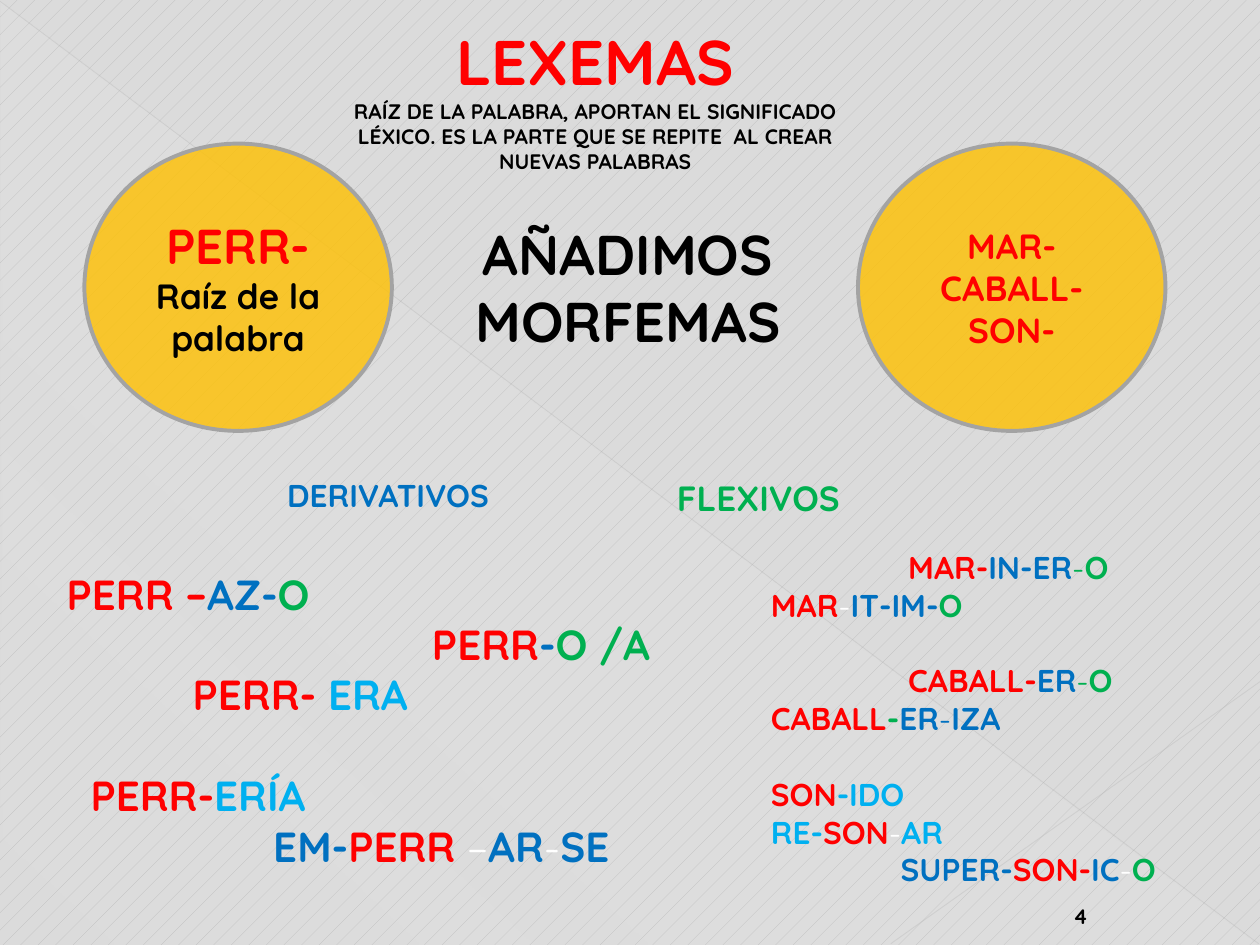
from lxml import etree
from pptx import Presentation
from pptx.dml.color import RGBColor
from pptx.enum.dml import MSO_PATTERN
from pptx.enum.shapes import MSO_CONNECTOR, MSO_SHAPE
from pptx.enum.text import MSO_ANCHOR, PP_ALIGN
from pptx.oxml import parse_xml
from pptx.oxml.ns import qn
from pptx.util import Inches, Pt

CENTER, LEFT = PP_ALIGN.CENTER, PP_ALIGN.LEFT
TOP, MIDDLE, BOTTOM = MSO_ANCHOR.TOP, MSO_ANCHOR.MIDDLE, MSO_ANCHOR.BOTTOM
WIDTH, HEIGHT = 10, 7.5
FONT = "Quicksand"
RED, BLUE, SKY, GREEN = "FF0000", "0070C0", "00B0F0", "00B050"
BLACK, WHITE, GRAY, GOLD = "000000", "FFFFFF", "A3A3A3", "FFC000"
LINE_HEIGHT = 1.2

# Centred text: box, anchor, paragraphs of (text, size, colour)
LABELS = [
    ((2.64, 0.13, 4.17, 1.31), TOP, [
        ("LEXEMAS", 36, RED),
        ("RAÍZ DE LA PALABRA, APORTAN EL SIGNIFICADO LÉXICO. "
         "ES LA PARTE QUE SE REPITE  AL CREAR NUEVAS PALABRAS", 12, BLACK)]),
    ((3.45, 1.69, 3.07, 1.18), TOP, [("AÑADIMOS", 32, BLACK), ("MORFEMAS", 32, BLACK)]),
    ((1.23, 3.73, 3.7, 0.4), TOP, [("DERIVATIVOS", 18, BLUE)]),
    ((4.72, 3.73, 2.6, 0.44), TOP, [("FLEXIVOS", 20, GREEN)]),
    ((8.3, 7.09, 0.55, 0.33), BOTTOM, [("4", 12, BLACK)]),
]
CIRCLE_TOP, CIRCLE_WIDTH, CIRCLE_HEIGHT = 1.14, 2.44, 2.28
CIRCLES = [
    (0.67, [("PERR-", 28, RED), ("Raíz de la palabra", 20, BLACK)]),
    (6.81, [("MAR-", 20, RED), ("CABALL-", 20, RED), ("SON-", 20, RED)]),
]
# Word lists: box, size, lines of (indent, skipped lines before, pieces).
# A piece is (text, colour); a third item False makes it regular weight.
WORD_LISTS = [
    ((0.43, 4.46, 4.88, 2.83), 24, [
        (0, 0, [("PERR –", RED), ("AZ-", BLUE), ("O", GREEN)]),
        (2.9, 0, [("PERR", RED), ("-", BLUE), ("O /A", GREEN)]),
        (1, 0, [("PERR- ", RED), ("ERA", SKY)]),
        (0.19, 1, [("PERR-", RED), ("ERÍA", SKY)]),
        (1.64, 0, [("EM-", BLUE), ("PERR", RED), (" –", WHITE, False),
                   ("AR", BLUE), ("-", WHITE, False), ("SE", BLUE)])]),
    ((6.02, 4.3, 3.46, 2.83), 18, [
        (1.09, 0, [("MAR-", RED), ("IN-ER", BLUE), ("-", GREEN, False), ("O", GREEN)]),
        (0, 0, [("MAR", RED), ("-", WHITE, False), ("IT-IM-", BLUE), ("O", GREEN)]),
        (1.09, 1, [("CABALL-", RED), ("ER", BLUE), ("-", GREEN, False), ("O", GREEN)]),
        (0, 0, [("CABALL", RED), ("-", GREEN), ("ER", BLUE),
                ("-", BLUE, False), ("IZA", BLUE)]),
        (0, 1, [("SON", RED), ("-IDO", SKY)]),
        (0, 0, [("RE-", SKY), ("SON", RED), ("-", WHITE, False), ("AR", SKY)]),
        (1.03, 0, [("SUPER-", BLUE), ("SON-", RED), ("IC", BLUE),
                   ("-", WHITE, False), ("O", GREEN)])]),
]
# Background lines: start, end, colour, width, opacity
RULES = [
    ((0, 0.01), (9.99, 7.49), "B4B4B4", 0.39, 35),
    ((10, 5.41), (7.07, 7.49), "BDBDBD", 0.47, 45),
]
SHEEN_STOPS = [(0, 10), (70, 8), (100, 1)]


def color(value):
    """Turn a hex string into a colour."""
    return RGBColor.from_string(value)


def set_opacity(element, percent):
    """Make the first solid colour below an element partly transparent."""
    rgb = next(element.iter(qn("a:srgbClr")))
    etree.SubElement(rgb, qn("a:alpha")).set("val", str(percent * 1000))


def style(font, size, hex_color, bold=True):
    """Set the font of a paragraph or run."""
    font.name, font.size, font.bold = FONT, Pt(size), bold
    font.color.rgb = color(hex_color)


def add_background(slide):
    """Draw the patterned ground, the sheen and the diagonal rules."""
    fill = slide.background.fill
    fill.patterned()
    fill.pattern = MSO_PATTERN.PERCENT_5
    fill.fore_color.rgb, fill.back_color.rgb = color("BABABA"), color("DBDBDB")

    sheen = slide.shapes.add_shape(MSO_SHAPE.RIGHT_TRIANGLE, Inches(0.01), Inches(0.02),
                                   Inches(WIDTH - 0.02), Inches(HEIGHT - 0.02))
    sheen.shadow.inherit = False
    sheen.line.fill.background()
    stops = "".join(
        f'<a:gs pos="{position * 1000}"><a:srgbClr val="F8F8F8">'
        f'<a:alpha val="{opacity * 1000}"/></a:srgbClr></a:gs>'
        for position, opacity in SHEEN_STOPS)
    gradient = parse_xml(
        '<a:gradFill xmlns:a="http://schemas.openxmlformats.org/drawingml/2006/main">'
        f'<a:gsLst>{stops}</a:gsLst><a:lin ang="{133 * 60000}" scaled="0"/></a:gradFill>')
    sheen._element.spPr.find(qn("a:prstGeom")).addnext(gradient)

    for start, end, hex_color, width, opacity in RULES:
        rule = slide.shapes.add_connector(MSO_CONNECTOR.STRAIGHT,
                                          *map(Inches, start + end))
        rule.line.color.rgb, rule.line.width = color(hex_color), Pt(width)
        properties = rule._element.spPr
        set_opacity(properties, opacity)
        etree.SubElement(properties, qn("a:effectLst"))


def paragraphs(frame, count):
    """Return the given number of paragraphs of a text frame."""
    return [frame.paragraphs[0]] + [frame.add_paragraph() for _ in range(count - 1)]


def write_centered(frame, anchor, lines):
    """Fill a frame with centred paragraphs of one style each."""
    frame.word_wrap, frame.vertical_anchor = True, anchor
    for paragraph, (text, size, hex_color) in zip(paragraphs(frame, len(lines)), lines):
        paragraph.text, paragraph.alignment = text, CENTER
        style(paragraph.font, size, hex_color)


def add_text_box(slide, box):
    """Add a wrapping text box and return its frame."""
    frame = slide.shapes.add_textbox(*map(Inches, box)).text_frame
    frame.word_wrap = True
    return frame


def add_circle(slide, left, lines):
    """Add a translucent gold ellipse with centred text."""
    circle = slide.shapes.add_shape(MSO_SHAPE.OVAL, Inches(left), Inches(CIRCLE_TOP),
                                    Inches(CIRCLE_WIDTH), Inches(CIRCLE_HEIGHT))
    circle.shadow.inherit = False
    circle.fill.solid()
    circle.fill.fore_color.rgb = color(GOLD)
    set_opacity(circle._element.spPr, 80)
    circle.line.color.rgb, circle.line.width = color(GRAY), Pt(2.25)
    write_centered(circle.text_frame, MIDDLE, lines)


def add_word_list(slide, box, size, lines):
    """Add indented words whose morphemes are coloured by type."""
    frame = add_text_box(slide, box)
    for paragraph, (indent, skipped, pieces) in zip(paragraphs(frame, len(lines)), lines):
        paragraph.alignment = LEFT
        paragraph.space_before = Pt(skipped * size * LINE_HEIGHT)
        paragraph._p.get_or_add_pPr().set("marL", str(Inches(indent)))
        for text, *look in pieces:
            run = paragraph.add_run()
            run.text = text
            style(run.font, size, *look)


presentation = Presentation()
presentation.slide_width, presentation.slide_height = Inches(WIDTH), Inches(HEIGHT)
slide = presentation.slides.add_slide(presentation.slide_layouts[6])
add_background(slide)
for left, lines in CIRCLES:
    add_circle(slide, left, lines)
for box, anchor, lines in LABELS:
    write_centered(add_text_box(slide, box), anchor, lines)
for word_list in WORD_LISTS:
    add_word_list(slide, *word_list)
presentation.save("out.pptx")
